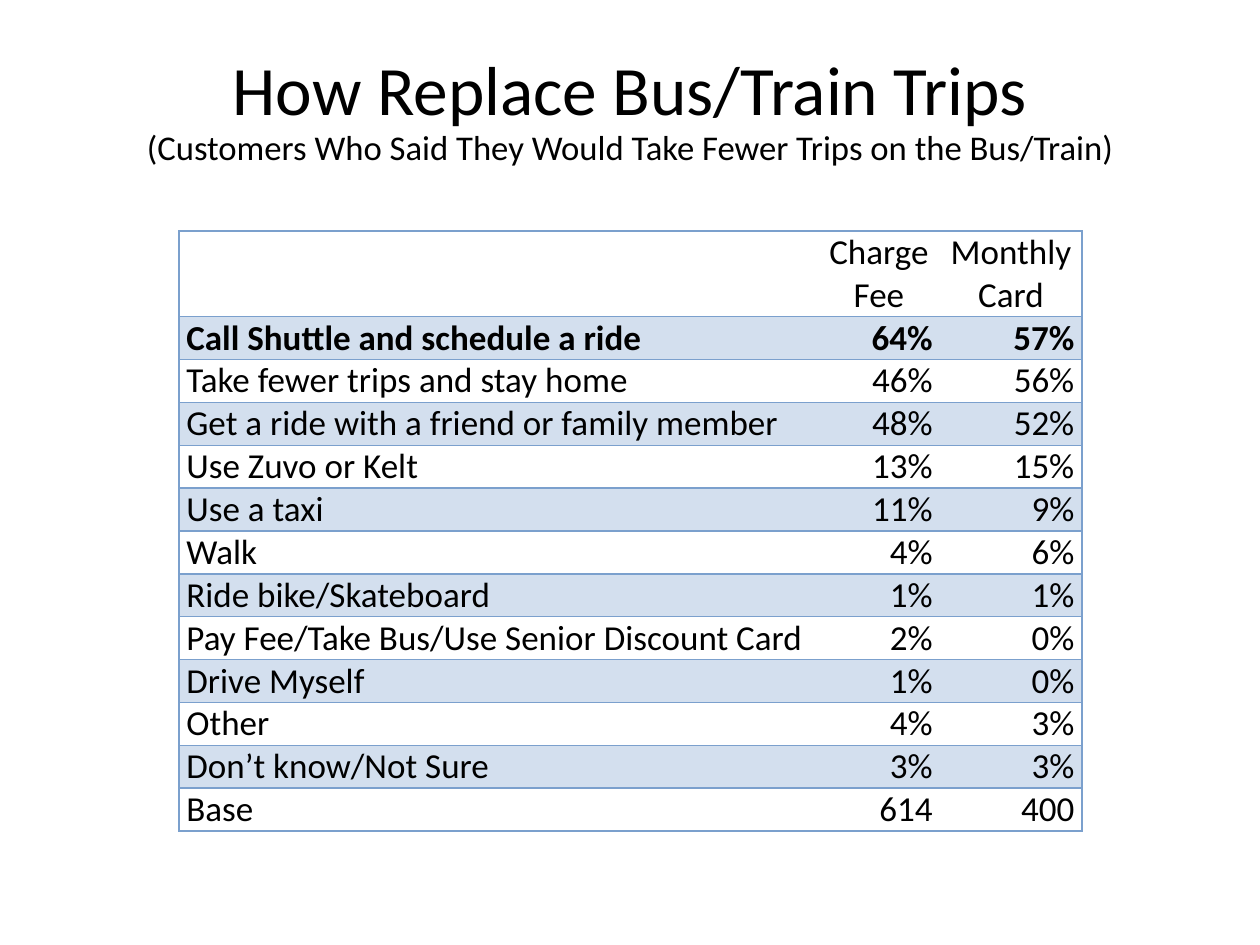
from dataclasses import dataclass

from lxml.etree import SubElement
from pptx import Presentation
from pptx.dml.color import RGBColor
from pptx.enum.text import MSO_ANCHOR, PP_ALIGN
from pptx.oxml.ns import qn
from pptx.util import Pt


@dataclass(frozen=True)
class Theme:
    font: str = "Calibri"
    text: str = "000000"
    band: str = "D3DFEE"
    border: str = "7BA0CD"
    title_size: float = 39.6
    subtitle_size: float = 19.8
    table_size: float = 20
    border_width: float = 1


HEADER = ("", "Charge\vFee", "Monthly\vCard")
ANSWERS = [
    ("Call Shuttle and schedule a ride", "64%", "57%"),
    ("Take fewer trips and stay home", "46%", "56%"),
    ("Get a ride with a friend or family member", "48%", "52%"),
    ("Use Zuvo or Kelt", "13%", "15%"),
    ("Use a taxi", "11%", "9%"),
    ("Walk", "4%", "6%"),
    ("Ride bike/Skateboard", "1%", "1%"),
    ("Pay Fee/Take Bus/Use Senior Discount Card", "2%", "0%"),
    ("Drive Myself", "1%", "0%"),
    ("Other", "4%", "3%"),
    ("Don’t know/Not Sure", "3%", "3%"),
    ("Base", "614", "400"),
]
COLUMN_WIDTHS = (365, 70, 81)
HEADER_HEIGHT, ROW_HEIGHT = 49, 24.5


def set_attributes(target, values):
    for name, value in values.items():
        setattr(target, name, value)


class SlideBuilder:
    def __init__(self, slide, theme):
        self.slide = slide
        self.theme = theme

    def style_font(self, font, size, bold=False):
        set_attributes(font, {"name": self.theme.font, "size": Pt(size), "bold": bold})
        font.color.rgb = RGBColor.from_string(self.theme.text)

    def title(self, left, top, width, height, title, subtitle):
        box = self.slide.shapes.add_textbox(Pt(left), Pt(top), Pt(width), Pt(height))
        set_attributes(box.text_frame, {
            "word_wrap": True, "vertical_anchor": MSO_ANCHOR.TOP,
            "margin_top": 0, "margin_bottom": 0,
        })
        paragraph = box.text_frame.paragraphs[0]
        set_attributes(paragraph, {"alignment": PP_ALIGN.CENTER, "line_spacing": 0.9})
        title_run = paragraph.add_run()
        title_run.text = title
        self.style_font(title_run.font, self.theme.title_size)
        paragraph.add_line_break()
        subtitle_run = paragraph.add_run()
        subtitle_run.text = subtitle
        self.style_font(subtitle_run.font, self.theme.subtitle_size)

    def cell_borders(self, cell, sides):
        properties = cell._tc.get_or_add_tcPr()
        for index, side in enumerate("LRTB"):
            line = SubElement(properties, qn(f"a:ln{side}"))
            line.set("w", str(Pt(self.theme.border_width)))
            if side in sides:
                fill = SubElement(line, qn("a:solidFill"))
                SubElement(fill, qn("a:srgbClr")).set("val", self.theme.border)
            else:
                SubElement(line, qn("a:noFill"))
            properties.insert(index, line)

    def cell(self, cell, text, alignment, bold, banded, sides):
        set_attributes(cell, {
            "margin_left": Pt(4.3), "margin_right": Pt(4.3),
            "margin_top": 0, "margin_bottom": 0,
        })
        cell.text = text
        paragraph = cell.text_frame.paragraphs[0]
        paragraph.alignment = alignment
        self.style_font(paragraph.font, self.theme.table_size, bold)
        for run in paragraph.runs:
            self.style_font(run.font, self.theme.table_size, bold)
        if banded:
            cell.fill.solid()
            cell.fill.fore_color.rgb = RGBColor.from_string(self.theme.band)
        else:
            cell.fill.background()
        self.cell_borders(cell, sides)

    def table(self, left, top, rows, column_widths, row_heights):
        table = self.slide.shapes.add_table(
            len(rows), len(column_widths), Pt(left), Pt(top),
            Pt(sum(column_widths)), Pt(sum(row_heights))).table
        set_attributes(table, {"first_row": False, "horz_banding": False})
        for column, width in zip(table.columns, column_widths):
            column.width = Pt(width)
        outer_sides = {0: "L", len(column_widths) - 1: "R"}
        for row_index, values in enumerate(rows):
            table.rows[row_index].height = Pt(row_heights[row_index])
            for column_index, text in enumerate(values):
                if column_index == 0:
                    alignment = PP_ALIGN.LEFT
                else:
                    alignment = PP_ALIGN.RIGHT if row_index else PP_ALIGN.CENTER
                self.cell(table.cell(row_index, column_index), text, alignment,
                          bold=row_index == 1, banded=row_index % 2 == 1,
                          sides="TB" + outer_sides.get(column_index, ""))


def main():
    presentation = Presentation()
    set_attributes(presentation, {"slide_width": Pt(720), "slide_height": Pt(540)})
    slide = presentation.slides.add_slide(presentation.slide_layouts[6])
    builder = SlideBuilder(slide, Theme())

    # Title and subtitle
    builder.title(36, 31.7, 648, 80, "How Replace Bus/Train Trips",
                  "(Customers Who Said They Would Take Fewer Trips on the Bus/Train)")

    # Survey results
    builder.table(102.25, 132, [HEADER, *ANSWERS], COLUMN_WIDTHS,
                  [HEADER_HEIGHT] + [ROW_HEIGHT] * len(ANSWERS))

    presentation.save("out.pptx")


if __name__ == "__main__":
    main()
